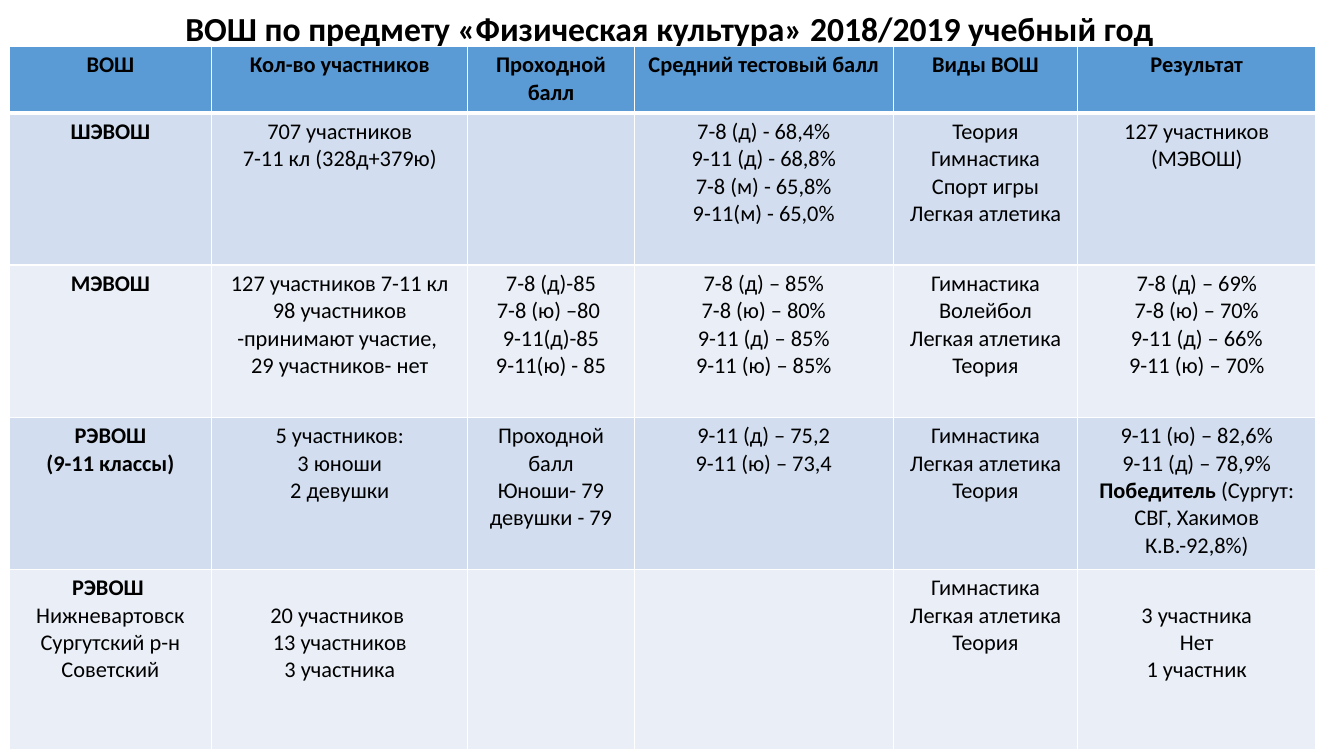
from dataclasses import dataclass

from lxml import etree
from pptx import Presentation
from pptx import util as u
from pptx.dml.color import RGBColor
from pptx.enum import text
from pptx.oxml import ns

PX = 9144  # EMU in one px, 100 px to the inch
FONT = "Calibri"
BLACK = RGBColor(0x00, 0x00, 0x00)
WHITE = RGBColor(0xFF, 0xFF, 0xFF)
BLUE = RGBColor(0x5B, 0x9B, 0xD5)
PALE = RGBColor(0xD2, 0xDE, 0xEF)
MIST = RGBColor(0xEA, 0xEF, 0xF7)

TITLE = "ВОШ по предмету «Физическая культура» 2018/2019 учебный год"
COLS = [201, 254, 165, 257, 183, 236]
PAD = 5
DROP = 32  # top margin that starts the text one line lower


@dataclass(frozen=True)
class Cell:
    """Lines of a cell; the part of a line before a bar is bold."""
    lines: str = ""
    top: int = PAD


@dataclass(frozen=True)
class Row:
    high: int
    fill: RGBColor
    cells: list[Cell]


ROWS = [
    Row(66, BLUE, [
        Cell("ВОШ|"),
        Cell("Кол-во участников|"),
        Cell("Проходной балл|"),
        Cell("Средний тестовый балл|"),
        Cell("Виды ВОШ|"),
        Cell("Результат|"),
    ]),
    Row(151, PALE, [
        Cell("ШЭВОШ|"),
        Cell("707 участников\n7-11 кл (328д+379ю)"),
        Cell(),
        Cell("7-8 (д) - 68,4%\n9-11 (д) - 68,8%\n7-8 (м) - 65,8%\n9-11(м) - 65,0%"),
        Cell("Теория\nГимнастика\nСпорт игры\nЛегкая атлетика"),
        Cell("127 участников (МЭВОШ)"),
    ]),
    Row(151, MIST, [
        Cell("МЭВОШ|"),
        Cell("127 участников 7-11 кл\n98 участников -принимают участие, \n29 участников- нет"),
        Cell("7-8 (д)-85\n7-8 (ю) –80 \n9-11(д)-85\n9-11(ю) - 85"),
        Cell("7-8 (д) – 85%\n7-8 (ю) – 80%\n9-11 (д) – 85%\n9-11 (ю) – 85%"),
        Cell("Гимнастика\nВолейбол\nЛегкая атлетика\nТеория"),
        Cell("7-8 (д) – 69%\n7-8 (ю) – 70%\n9-11 (д) – 66%\n9-11 (ю) – 70%"),
    ]),
    Row(151, PALE, [
        Cell("РЭВОШ|\n(9-11 классы)|"),
        Cell("5 участников:\n3 юноши\n2 девушки"),
        Cell("Проходной балл\nЮноши- 79\nдевушки - 79"),
        Cell("9-11 (д) – 75,2\n9-11 (ю) – 73,4"),
        Cell("Гимнастика\nЛегкая атлетика\nТеория"),
        Cell("9-11 (ю) – 82,6%\n9-11 (д) – 78,9%\n"
             "Победитель |(Сургут: СВГ, Хакимов К.В.-92,8%)"),
    ]),
    Row(179, MIST, [
        Cell("РЭВОШ |\nНижневартовск\nСургутский р-н\nСоветский"),
        Cell("20 участников \n13 участников\n3 участника", DROP),
        Cell(),
        Cell(),
        Cell("Гимнастика\nЛегкая атлетика\nТеория"),
        Cell("3 участника\nНет\n1 участник", DROP),
    ]),
]


def style(font, size: int, bold: bool) -> None:
    font.name = FONT
    font.size = u.Pt(size)
    font.bold = bold
    font.color.rgb = BLACK


def write(frame, lines: str, size: int) -> None:
    """Fill a text frame with centred lines, bold up to the bar."""
    frame.text = lines.replace("|", "")
    for para, line in zip(frame.paragraphs, lines.split("\n")):
        para.alignment = text.PP_ALIGN.CENTER
        para.font.size = u.Pt(size)
        head, bar, tail = line.partition("|")
        para.text = head
        if tail:
            para.add_run().text = tail
        for i, run in enumerate(para.runs):
            style(run.font, size, bool(bar) and i == 0)


def edge(cell, side: str, width: int) -> None:
    props = cell._tc.get_or_add_tcPr()
    line = etree.SubElement(props, ns.qn(f"a:ln{side}"), w=str(u.Pt(width)))
    fill = etree.SubElement(line, ns.qn("a:solidFill"))
    etree.SubElement(fill, ns.qn("a:srgbClr"), val=str(WHITE))


def add_title(slide) -> None:
    box = slide.shapes.add_textbox(87 * PX, 13 * PX, 1154 * PX, 34 * PX)
    frame = box.text_frame
    frame.word_wrap = True
    frame.vertical_anchor = text.MSO_ANCHOR.MIDDLE
    frame.margin_top = frame.margin_bottom = 0
    write(frame, TITLE + "|", 24)
    frame.paragraphs[0].line_spacing = 0.9


def add_grid(slide) -> None:
    wide, high = sum(COLS), sum(row.high for row in ROWS)
    shape = slide.shapes.add_table(
        len(ROWS), len(COLS), 9 * PX, 46 * PX, wide * PX, high * PX)
    grid = shape.table
    for col, width in zip(grid.columns, COLS):
        col.width = width * PX
    for r, row in enumerate(ROWS):
        grid.rows[r].height = row.high * PX
        for c, item in enumerate(row.cells):
            cell = grid.cell(r, c)
            cell.margin_top = item.top * PX
            cell.margin_bottom = PAD * PX
            write(cell.text_frame, item.lines, 16)
            for side in "LRTB":
                thick = (r, side) in ((0, "B"), (1, "T"))
                edge(cell, side, 3 if thick else 1)
            cell.fill.solid()
            cell.fill.fore_color.rgb = row.fill


def main() -> None:
    deck = Presentation()
    deck.slide_width, deck.slide_height = 1333 * PX, 750 * PX
    slide = deck.slides.add_slide(deck.slide_layouts[6])
    add_title(slide)
    add_grid(slide)
    deck.save("out.pptx")


if __name__ == "__main__":
    main()
